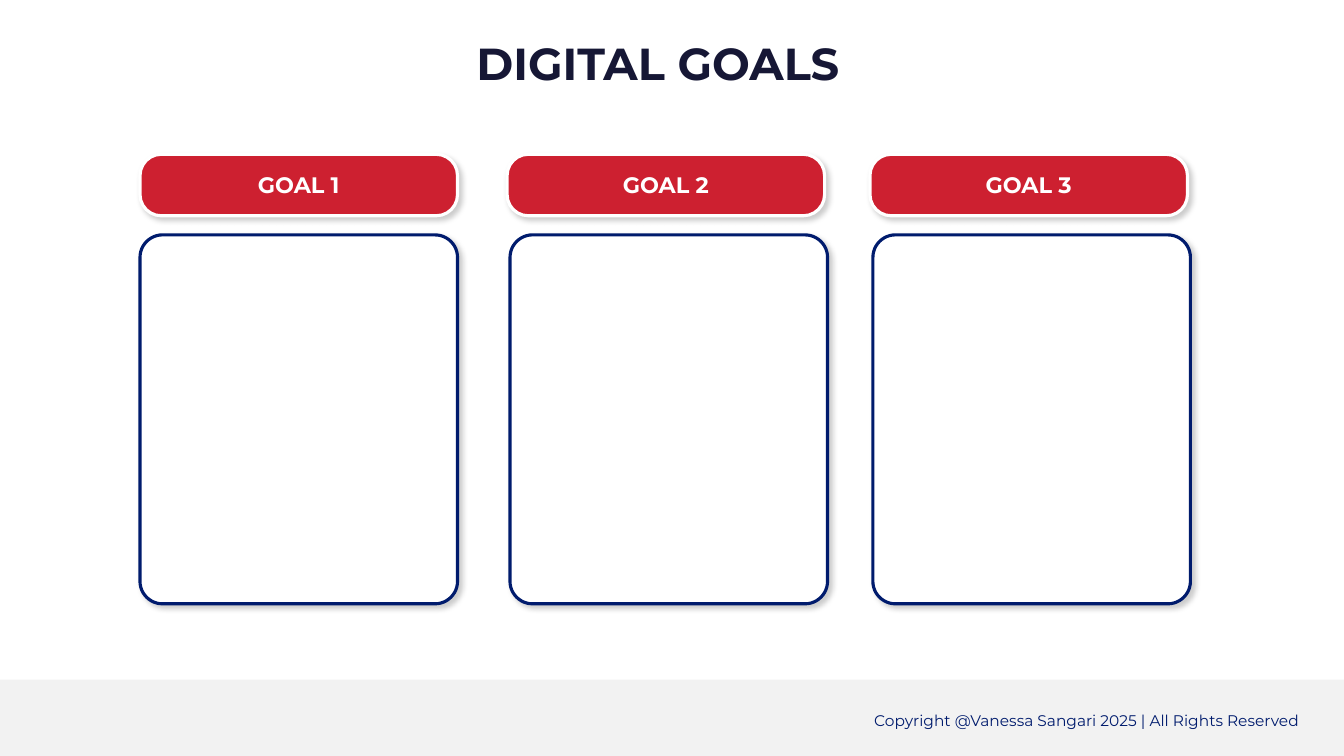
import pptx
import pptx.util
import lxml.etree
from pptx.dml.color import RGBColor
from pptx.enum.shapes import MSO_SHAPE
from pptx.enum.text import MSO_ANCHOR, MSO_AUTO_SIZE, PP_ALIGN
from pptx.oxml.ns import nsdecls

TITLE = "DIGITAL GOALS "
COPYRIGHT = "Copyright @Vanessa Sangari 2025 | All Rights Reserved"
# goal name, left of its header, left of its panel
GOALS = [
    ("GOAL 1", 100, 100),
    ("GOAL 2", 362.2, 364.3),
    ("GOAL 3", 621.4, 623.5),
]

FONT = "Montserrat"
WHITE = RGBColor(0xFF, 0xFF, 0xFF)
GREY = RGBColor(0xF2, 0xF2, 0xF2)
RED = RGBColor(0xCD, 0x20, 0x30)
BLUE = RGBColor(0x00, 0x1B, 0x6D)
INK = RGBColor(0x16, 0x17, 0x35)

PAGE_WIDTH, PAGE_HEIGHT = 960, 540
FOOTER_TOP = 485.5
CARD_WIDTH = 226.8
HEADER_TOP, HEADER_HEIGHT = 110.2, 43.9
PANEL_TOP, PANEL_HEIGHT = 167.8, 263.5

SHADOW = (
    f'<a:effectLst {nsdecls("a")}>'
    '<a:outerShdw blurRad="50800" dist="38100" dir="2700000" algn="tl" rotWithShape="0">'
    '<a:srgbClr val="000000"><a:alpha val="20000"/></a:srgbClr>'
    '</a:outerShdw></a:effectLst>'
)


def points(*lengths):
    return [pptx.util.Pt(length) for length in lengths]


def write(shape, text, size, color, align, bold=False, anchor=MSO_ANCHOR.TOP):
    frame = shape.text_frame
    frame.word_wrap = True
    frame.vertical_anchor = anchor
    frame.margin_left, frame.margin_right = points(7.2, 7.2)
    frame.margin_top, frame.margin_bottom = points(3.6, 3.6)
    para = frame.paragraphs[0]
    para.text = text
    para.alignment = align
    para.font.name = FONT
    para.font.size = pptx.util.Pt(size)
    para.font.bold = bold
    para.font.color.rgb = color
    return para


def add_card(page, left, top, height, rounding, fill, line):
    """Add a rounded box with an outline and a soft drop shadow."""
    card = page.shapes.add_shape(
        MSO_SHAPE.ROUNDED_RECTANGLE, *points(left, top, CARD_WIDTH, height))
    card.adjustments[0] = rounding
    card.fill.solid()
    card.fill.fore_color.rgb = fill
    card.line.color.rgb = line
    card.line.width = pptx.util.Pt(2.25)
    card._element.spPr.append(lxml.etree.fromstring(SHADOW))
    return card


def add_footer(page):
    band = page.shapes.add_shape(
        MSO_SHAPE.RECTANGLE,
        *points(0, FOOTER_TOP, PAGE_WIDTH, PAGE_HEIGHT - FOOTER_TOP))
    band.shadow.inherit = False
    band.fill.solid()
    band.fill.fore_color.rgb = GREY
    band.line.fill.background()
    box = page.shapes.add_textbox(*points(409.7, 497.5, 525.6, 25.2))
    para = write(box, COPYRIGHT, 11, BLUE, PP_ALIGN.RIGHT)
    para.line_spacing = 1.5


def add_title(page):
    title = page.shapes.title
    title.left, title.top, title.width, title.height = points(99.4, 21.6, 750.2, 46.1)
    para = write(title, TITLE, 32, INK, PP_ALIGN.CENTER, bold=True)
    para.line_spacing = 1.0
    title.text_frame.auto_size = MSO_AUTO_SIZE.SHAPE_TO_FIT_TEXT


def main():
    deck = pptx.Presentation()
    deck.slide_width, deck.slide_height = points(PAGE_WIDTH, PAGE_HEIGHT)
    page = deck.slides.add_slide(deck.slide_layouts.get_by_name("Title Only"))
    page.background.fill.solid()
    page.background.fill.fore_color.rgb = WHITE
    add_footer(page)
    add_title(page)
    for name, header_left, panel_left in GOALS:
        add_card(page, panel_left, PANEL_TOP, PANEL_HEIGHT, 0.071, WHITE, BLUE)
        header = add_card(page, header_left, HEADER_TOP, HEADER_HEIGHT, 0.345, RED, WHITE)
        write(header, name, 16, WHITE, PP_ALIGN.CENTER, bold=True, anchor=MSO_ANCHOR.MIDDLE)
    deck.save("out.pptx")


if __name__ == "__main__":
    main()
